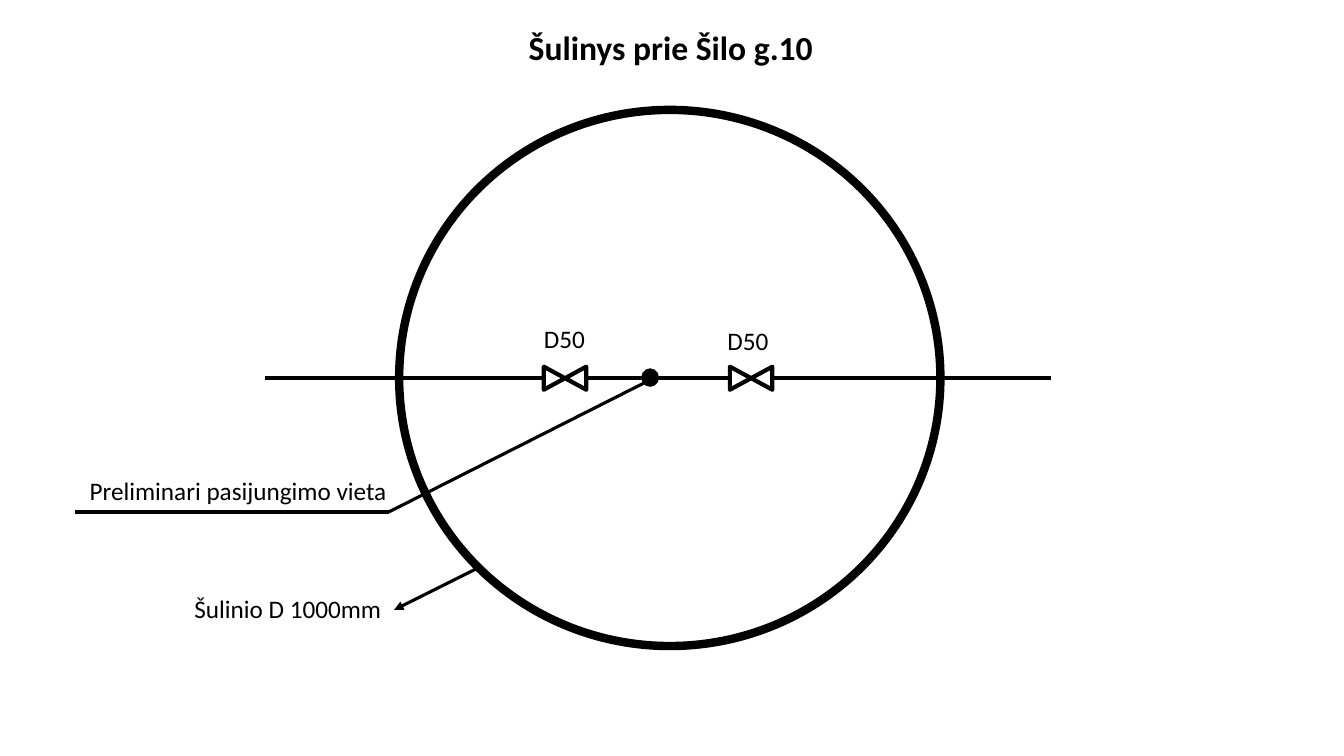
from dataclasses import dataclass

from lxml import etree
from pptx import Presentation
from pptx.dml.color import RGBColor
from pptx.enum.shapes import MSO_CONNECTOR, MSO_SHAPE
from pptx.enum.text import MSO_ANCHOR, MSO_AUTO_SIZE, PP_ALIGN
from pptx.oxml.ns import qn
from pptx.util import Cm, Pt

STRAIGHT = MSO_CONNECTOR.STRAIGHT
CIRCLE = MSO_SHAPE.FLOWCHART_CONNECTOR
VALVE = MSO_SHAPE.FLOWCHART_COLLATE
TOP = MSO_ANCHOR.TOP
FIXED = MSO_AUTO_SIZE.NONE
LEFT, CENTER = PP_ALIGN.LEFT, PP_ALIGN.CENTER


@dataclass(frozen=True)
class Theme:
    ink: RGBColor = RGBColor(0, 0, 0)
    font: str = "Calibri"
    title_size: Pt = Pt(24)
    label_size: Pt = Pt(18)
    wall: Pt = Pt(6)
    pipe: Pt = Pt(3)
    leader: Pt = Pt(2.25)
    dot: Pt = Pt(1)


THEME = Theme()

prs = Presentation()
prs.slide_width, prs.slide_height = Cm(33.87), Cm(19.05)
slide = prs.slides.add_slide(prs.slide_layouts[5])
shapes = slide.shapes


def write(text, box, size=THEME.label_size, bold=False, align=LEFT, wrap=False):
    frame = box.text_frame
    frame.word_wrap = wrap
    frame.auto_size = FIXED
    frame.vertical_anchor = TOP
    frame.text = text
    paragraph = frame.paragraphs[0]
    paragraph.alignment = align
    font = paragraph.runs[0].font
    font.name, font.size, font.bold = THEME.font, size, bold
    font.color.rgb = THEME.ink


def draw_line(x1, y1, x2, y2, width, arrow=False):
    line = shapes.add_connector(STRAIGHT, Cm(x1), Cm(y1), Cm(x2), Cm(y2))
    line.line.color.rgb = THEME.ink
    line.line.width = width
    properties = line.element.spPr
    if arrow:
        etree.SubElement(properties.find(qn("a:ln")), qn("a:tailEnd"), type="triangle")
    etree.SubElement(properties, qn("a:effectLst"))


# Title
title = shapes.title
title.left, title.top, title.width, title.height = Cm(13.03), Cm(0.56), Cm(7.75), Cm(1.27)
write("Šulinys prie Šilo g.10", title, size=THEME.title_size, bold=True, align=CENTER)

# Pipe, interrupted by the two valves
pipe_y = 9.53
valve_centres = (14.24, 18.93)
valve_length, valve_bore = 1.07, 0.58
pipe_ends = [6.68]
for centre in valve_centres:
    pipe_ends += [centre - valve_length / 2, centre + valve_length / 2]
pipe_ends.append(26.49)
for start, end in zip(pipe_ends[::2], pipe_ends[1::2]):
    draw_line(start, pipe_y, end, pipe_y, THEME.pipe)

# Leader to the connection point, its underline, and the well arrow
draw_line(9.8, 12.9, 16.43, 9.55, THEME.leader)
draw_line(1.88, 12.9, 9.8, 12.9, THEME.leader)
draw_line(12.07, 14.3, 9.93, 15.37, THEME.leader, arrow=True)

# Well wall, valves and connection point
symbols = [(CIRCLE, 10.06, 2.77, 13.64, 13.51, 0, THEME.wall, False)]
for centre in valve_centres:
    symbols.append((VALVE, centre - valve_bore / 2, pipe_y - valve_length / 2,
                    valve_bore, valve_length, 270, THEME.pipe, False))
symbols.append((CIRCLE, 16.18, 9.3, 0.41, 0.43, 0, THEME.dot, True))
for kind, x, y, width, height, turn, stroke, filled in symbols:
    symbol = shapes.add_shape(kind, Cm(x), Cm(y), Cm(width), Cm(height))
    symbol.shadow.inherit = False
    symbol.rotation = turn
    symbol.line.color.rgb = THEME.ink
    symbol.line.width = stroke
    if filled:
        symbol.fill.solid()
        symbol.fill.fore_color.rgb = THEME.ink
    else:
        symbol.fill.background()

# Labels
for text, x, y, width, wrap in (
    ("D50", 13.46, 8.03, 1.55, False),
    ("D50", 18.08, 8.08, 1.55, False),
    ("Preliminari pasijungimo vieta", 2.01, 11.86, 8.18, True),
    ("Šulinio D 1000mm", 4.65, 14.83, 5.28, False),
):
    label = shapes.add_textbox(Cm(x), Cm(y), Cm(width), Cm(1.02))
    write(text, label, wrap=wrap)

prs.save("out.pptx")
